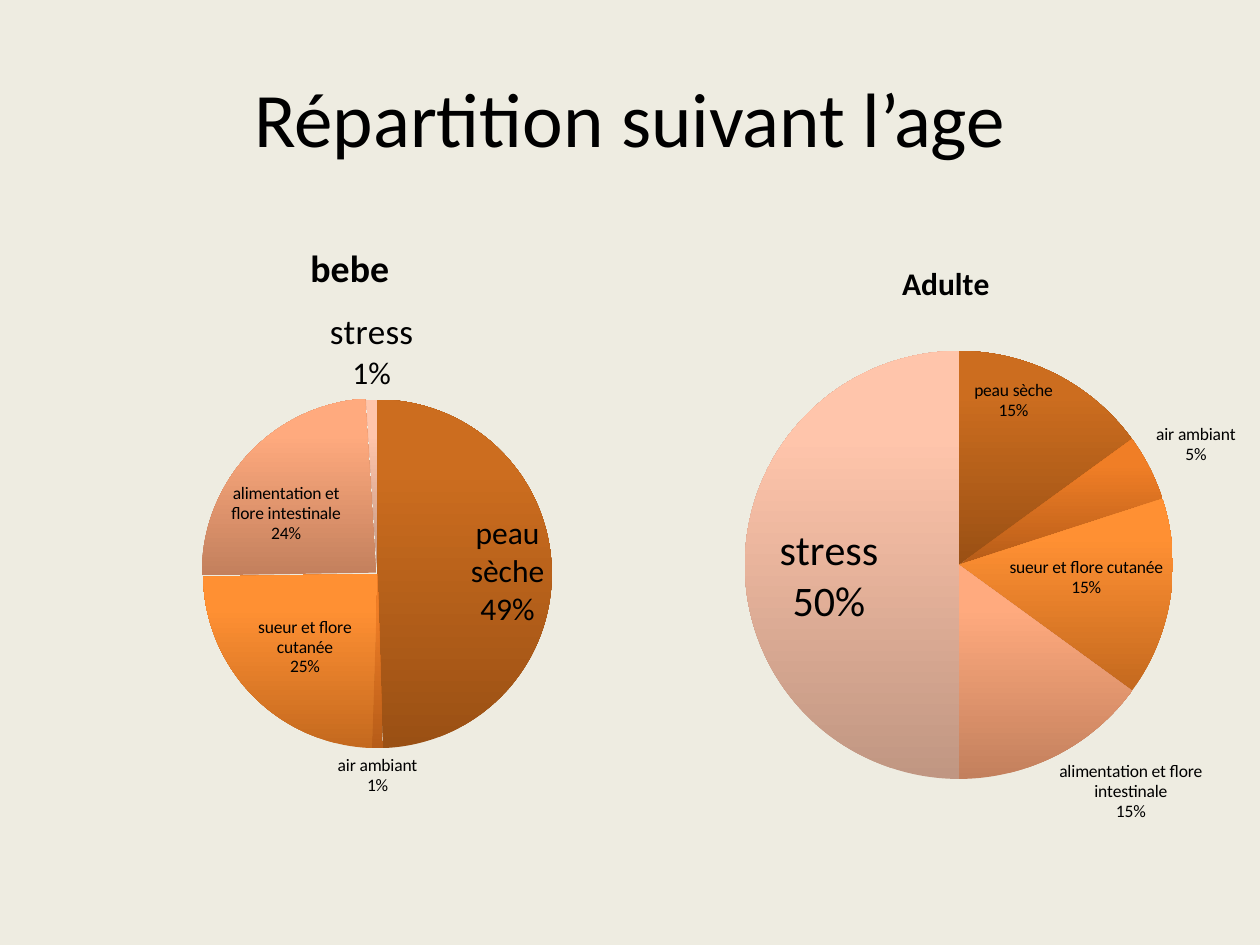
from lxml.etree import SubElement
from pptx import Presentation
from pptx.chart.data import CategoryChartData
from pptx.dml.color import RGBColor
from pptx.enum.chart import XL_CHART_TYPE as ChartType, XL_LABEL_POSITION as Position
from pptx.enum.text import MSO_ANCHOR as Anchor, PP_ALIGN as Align
from pptx.oxml import parse_xml
from pptx.oxml.ns import nsdecls, qn
from pptx.util import Cm, Pt

FONT = "Calibri"
COLORS = {"background": "EEECE1", "text": "000000"}
TITLE = "Répartition suivant l’age"
SLICES = {
    "peau sèche": ("9A5014", "CC6D1F"),
    "air ambiant": ("B65C18", "F07E26"),
    "sueur et flore cutanée": ("C4691E", "FF9033"),
    "alimentation et flore intestinale": ("C3805D", "FFAA7E"),
    "stress": ("C09682", "FFC5AB"),
}
INSIDE, MIDDLE, OUTSIDE = Position.INSIDE_END, Position.CENTER, Position.OUTSIDE_END
PIES = [
    {
        "name": "bebe", "values": (49, 1, 24, 24, 1),
        "frame": (1.7, 4.11, 10.52, 12.27), "center": (7.61, 11.57), "diameter": 7.03,
        "title_size": 21.6, "title_at": (0.42, 0.05), "base_size": 18, "exploded": 3,
        "labels": [
            ("49%", (18, 18), INSIDE, None),
            ("1%", (10, 10), OUTSIDE, None),
            ("25%", (10, 10), MIDDLE, (-0.02, 0.02)),
            ("24%", (10, 10), MIDDLE, (-0.05, 0)),
            ("1%", (20, 18), OUTSIDE, None),
        ],
    },
    {
        "name": "Adulte", "values": (15, 5, 15, 15, 50),
        "frame": (11.3, 4.52, 15.39, 12.6), "center": (19.33, 11.39), "diameter": 8.63,
        "title_size": 18, "title_at": (0.44, 0.05), "base_size": 10, "exploded": None,
        "labels": [
            (None, (10, 10), INSIDE, None),
            (None, (10, 10), OUTSIDE, None),
            (None, (10, 10), INSIDE, None),
            (None, (10, 10), OUTSIDE, None),
            ("50%", (24, 24), MIDDLE, (-0.03, 0.02)),
        ],
    },
]


def style(font, size, bold=False):
    font.name, font.size, font.bold = FONT, Pt(size), bold
    font.color.rgb = RGBColor.from_string(COLORS["text"])


def manual_layout(**settings):
    layout = parse_xml(f"<c:layout {nsdecls('c')}><c:manualLayout/></c:layout>")
    for tag, value in settings.items():
        SubElement(layout[0], qn(f"c:{tag}")).set("val", str(value))
    return layout


def place(parent, layout, index):
    for old in parent.findall(qn("c:layout")):
        parent.remove(old)
    parent.insert(index, layout)


def paint(point, colors):
    point.format.fill.gradient()
    point.format.fill.gradient_angle = 90
    stops = point.format.fill.gradient_stops
    for stop, color, position in zip(stops, colors, (0, 0.8)):
        stop.color.rgb = RGBColor.from_string(color)
        stop.position = position
    point.format.line.fill.background()


def add_label(series, index, category, percent, sizes, position, shift):
    label = series.points[index].data_label
    if percent:
        label.text_frame.text = f"{category}\n{percent}"
        for para, size in zip(label.text_frame.paragraphs, sizes):
            for span in para.runs:
                style(span.font, size)
    else:
        style(label.font, sizes[0])
    label.position = position
    node = next(item for item in series.data_labels._element.findall(qn("c:dLbl"))
                if item.find(qn("c:idx")).get("val") == str(index))
    for tag, value in (("showVal", 0), ("showCatName", 1), ("showPercent", 1)):
        node.find(qn(f"c:{tag}")).set("val", str(value))
    SubElement(node, qn("c:separator")).text = "\n"
    if shift:
        place(node, manual_layout(x=shift[0], y=shift[1]), 1)


def add_pie(page, pie):
    data = CategoryChartData()
    data.categories = list(SLICES)
    data.add_series(pie["name"], pie["values"])
    left, top, width, height = pie["frame"]
    chart = page.shapes.add_chart(ChartType.PIE, *map(Cm, pie["frame"]), data).chart
    style(chart.font, pie["base_size"])
    chart.has_legend = False
    chart.has_title = True
    chart.chart_title.text_frame.text = pie["name"]
    style(chart.chart_title.text_frame.paragraphs[0].runs[0].font, pie["title_size"], True)
    chart.chart_title.include_in_layout = False
    title_x, title_y = pie["title_at"]
    place(chart.chart_title._element,
          manual_layout(xMode="edge", yMode="edge", x=title_x, y=title_y), 1)

    center_x, center_y = pie["center"]
    radius = pie["diameter"] / 2
    plot_layout = manual_layout(
        layoutTarget="inner", xMode="edge", yMode="edge",
        x=(center_x - radius - left) / width, y=(center_y - radius - top) / height,
        w=2 * radius / width, h=2 * radius / height)
    place(chart._chartSpace.chart.plotArea, plot_layout, 0)

    plot = chart.plots[0]
    plot.vary_by_categories = True
    series = plot.series[0]
    series.data_labels.show_value = False
    series.data_labels.show_category_name = True
    series.data_labels.show_percentage = True
    for index, (category, colors) in enumerate(SLICES.items()):
        paint(series.points[index], colors)
        add_label(series, index, category, *pie["labels"][index])
    if pie["exploded"] is not None:
        for node in series._element.findall(qn("c:dPt")):
            if node.find(qn("c:idx")).get("val") == str(pie["exploded"]):
                explosion = parse_xml(f'<c:explosion {nsdecls("c")} val="1"/>')
                node.find(qn("c:spPr")).addprevious(explosion)


def main():
    deck = Presentation()
    deck.slide_width, deck.slide_height = Cm(25.4), Cm(19.05)
    page = deck.slides.add_slide(deck.slide_layouts[6])
    page.background.fill.solid()
    page.background.fill.fore_color.rgb = RGBColor.from_string(COLORS["background"])

    box = page.shapes.add_textbox(Cm(1.27), Cm(0.76), Cm(22.86), Cm(3.18))
    frame = box.text_frame
    frame.word_wrap = True
    frame.vertical_anchor = Anchor.MIDDLE
    frame.text = TITLE
    frame.paragraphs[0].alignment = Align.CENTER
    style(frame.paragraphs[0].runs[0].font, 44)

    for pie in PIES:
        add_pie(page, pie)
    deck.save("out.pptx")


if __name__ == "__main__":
    main()
